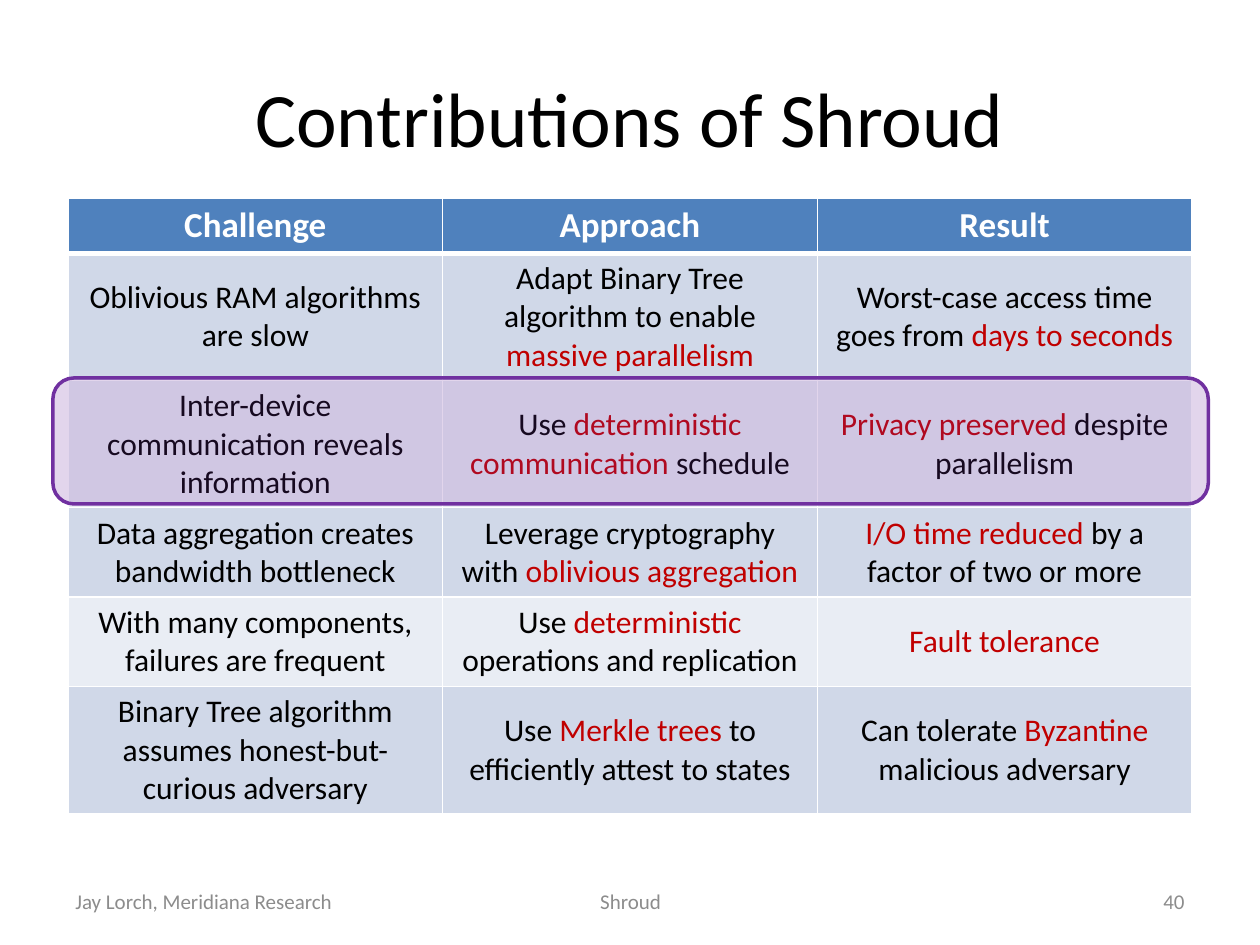
"""Build the slide that sums up the contributions of Shroud."""
from lxml.etree import SubElement as Sub
from pptx import Presentation as Deck
from pptx.dml.color import RGBColor as RGB
from pptx.enum.shapes import MSO_SHAPE as Shape
from pptx.enum.text import MSO_ANCHOR as Anchor, PP_ALIGN as Align
from pptx.oxml.ns import qn
from pptx.util import Pt

SCALE = 9144
HUES = {
    "ink": "000000", "white": "FFFFFF", "red": "C00000", "gray": "8C8C8C",
    "head": "4F81BD", "dark": "D0D8E8", "light": "E9EDF4", "mark": "7030A0",
}
HEADS = ["Challenge", "Approach", "Result"]
ROWS = [
    ["Oblivious RAM algorithms are slow",
     "Adapt Binary Tree algorithm to enable *massive parallelism",
     "Worst-case access time goes from *days to seconds"],
    ["Inter-device communication reveals information",
     "Use *deterministic communication *schedule",
     "*Privacy preserved* despite parallelism"],
    ["Data aggregation creates bandwidth bottleneck",
     "Leverage cryptography with *oblivious aggregation",
     "*I/O time reduced *by a factor of two or more"],
    ["With many components, failures are frequent",
     "Use *deterministic* operations and replication",
     "*Fault tolerance"],
    ["Binary Tree algorithm assumes honest-but-curious adversary",
     "Use *Merkle trees* to efficiently attest to states",
     "Can tolerate *Byzantine *malicious adversary"],
]
TALL = [44, 101, 101, 71, 71, 101]
FEET = [
    ("Jay Lorch, Meridiana Research", 50, 233, Align.LEFT),
    ("Shroud", 342, 317, Align.CENTER),
    ("40", 717, 233, Align.RIGHT),
]


def px(*nums):
    return [num * SCALE for num in nums]


class Page:
    def __init__(self, deck, font="Calibri"):
        self.font = font
        self.slide = deck.slides.add_slide(deck.slide_layouts[5])
        self.shapes = self.slide.shapes

    def hue(self, name):
        return RGB.from_string(HUES[name])

    def runs(self, frame, text, size, hue="ink", align=Align.CENTER, bold=False):
        para = frame.paragraphs[0]
        para.alignment = align
        for num, part in enumerate(text.split("*")):
            if part:
                run = para.add_run()
                run.text = part
                run.font.name = self.font
                run.font.size = Pt(size)
                run.font.bold = bold
                run.font.color.rgb = self.hue("red" if num % 2 else hue)

    def title(self, text, box):
        item = self.shapes.title
        item.left, item.top, item.width, item.height = px(*box)
        item.text_frame.vertical_anchor = Anchor.MIDDLE
        self.runs(item.text_frame, text, 44)

    def label(self, text, box, align):
        frame = self.shapes.add_textbox(*px(*box)).text_frame
        frame.word_wrap = True
        frame.vertical_anchor = Anchor.MIDDLE
        self.runs(frame, text, 12, "gray", align)

    def edge(self, cell, row):
        prop = cell._tc.get_or_add_tcPr()
        thick = {0: "B", 1: "T"}.get(row)
        for side in "LRTB":
            wide = Pt(3 if side == thick else 1)
            line = Sub(prop, qn("a:ln" + side), w=str(wide))
            fill = Sub(line, qn("a:solidFill"))
            Sub(fill, qn("a:srgbClr"), val=HUES["white"])

    def table(self, data, box, tall):
        grid = self.shapes.add_table(len(data), len(data[0]), *px(*box)).table
        for row, texts in enumerate(data):
            grid.rows[row].height = px(tall[row])[0]
            for col, text in enumerate(texts):
                cell = grid.cell(row, col)
                cell.vertical_anchor = Anchor.MIDDLE
                self.edge(cell, row)
                cell.fill.solid()
                if row == 0:
                    cell.fill.fore_color.rgb = self.hue("head")
                    self.runs(cell.text_frame, text, 20, "white", bold=True)
                else:
                    cell.fill.fore_color.rgb = self.hue("dark" if row % 2 else "light")
                    self.runs(cell.text_frame, text, 18)

    def frame(self, box, hue, alpha):
        item = self.shapes.add_shape(Shape.ROUNDED_RECTANGLE, *px(*box))
        item.shadow.inherit = False
        item.fill.solid()
        item.fill.fore_color.rgb = self.hue(hue)
        tint = item._element.spPr.find(qn("a:solidFill"))[0]
        Sub(tint, qn("a:alpha"), val=str(alpha * 1000))
        item.line.color.rgb = self.hue(hue)
        item.line.width = Pt(2)


def main():
    deck = Deck()
    deck.slide_width, deck.slide_height = px(1000, 750)
    page = Page(deck)
    page.title("Contributions of Shroud", (50, 30, 900, 125))
    for text, left, wide, align in FEET:
        page.label(text, (left, 695, wide, 40), align)
    page.table([HEADS] + ROWS, (54, 157, 892, sum(TALL)), TALL)
    page.frame((42, 300, 917, 100), "mark", 20)
    deck.save("out.pptx")


if __name__ == "__main__":
    main()
